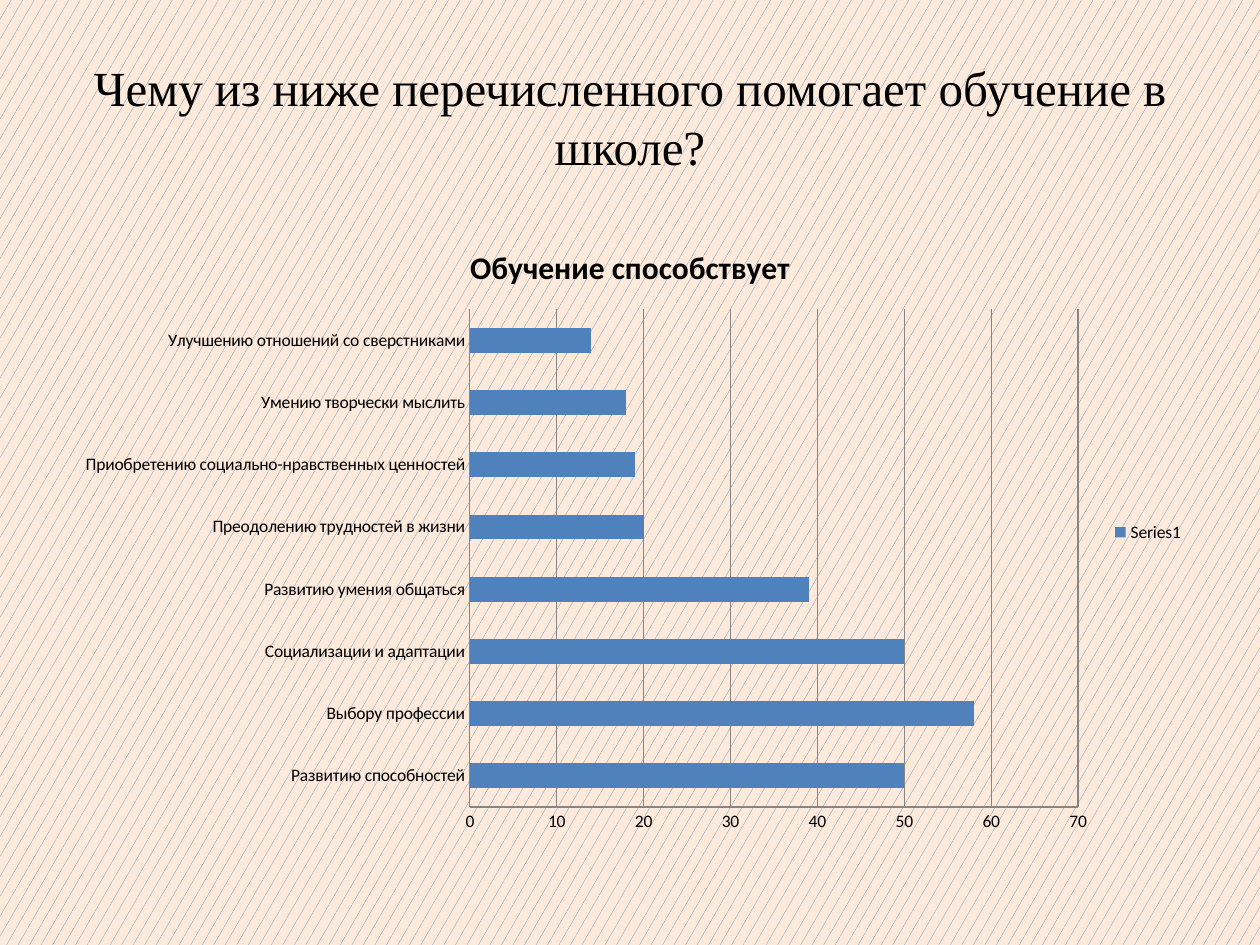
from pptx import Presentation
from pptx.chart.data import CategoryChartData
from pptx.dml.color import RGBColor
from pptx.enum.chart import (XL_AXIS_CROSSES, XL_CHART_TYPE, XL_LEGEND_POSITION,
                             XL_TICK_LABEL_POSITION, XL_TICK_MARK)
from pptx.enum.dml import MSO_PATTERN
from pptx.enum.text import MSO_ANCHOR, PP_ALIGN
from pptx.util import Inches, Pt

BAR, RIGHT = XL_CHART_TYPE.BAR_CLUSTERED, XL_LEGEND_POSITION.RIGHT
NO_TICK, NEXT_TO = XL_TICK_MARK.NONE, XL_TICK_LABEL_POSITION.NEXT_TO_AXIS
AT_ZERO, CONFETTI = XL_AXIS_CROSSES.AUTOMATIC, MSO_PATTERN.SMALL_CONFETTI
CENTER, MIDDLE = PP_ALIGN.CENTER, MSO_ANCHOR.MIDDLE

ANSWERS = {
    "Развитию способностей": 50,
    "Выбору профессии": 58,
    "Социализации и адаптации": 50,
    "Развитию умения общаться": 39,
    "Преодолению трудностей в жизни": 20,
    "Приобретению социально-нравственных ценностей": 19,
    "Умению творчески мыслить": 18,
    "Улучшению отношений со сверстниками": 14,
}


def rgb(value):
    """Turn a hex string into a colour."""
    return RGBColor.from_string(value)


def style_font(font, size, name="Calibri", color="000000", bold=False):
    """Format a font."""
    font.size, font.name, font.bold = Pt(size), name, bold
    font.color.rgb = rgb(color)


def write(tf, text, **fmt):
    """Put one centred, formatted paragraph in a text frame."""
    p = tf.paragraphs[0]
    p.alignment = CENTER
    r = p.add_run()
    r.text = text
    style_font(r.font, **fmt)


class Deck:
    """Hold the style and the current slide."""

    accent, paper, grid = "4F81BD", "FDEADA", "868686"

    def __init__(self, width, height):
        """Start a presentation of the given size in inches."""
        self.prs = Presentation()
        self.prs.slide_width, self.prs.slide_height = Inches(width), Inches(height)

    def box(self, x, y, w, h):
        """Turn shares of the slide into lengths."""
        width, height = self.prs.slide_width, self.prs.slide_height
        return int(x * width), int(y * height), int(w * width), int(h * height)

    def slide(self):
        """Add a title-only slide with a patterned background."""
        self.s = self.prs.slides.add_slide(self.prs.slide_layouts[5])
        fill = self.s.background.fill
        fill.patterned()
        fill.pattern = CONFETTI
        fill.fore_color.rgb, fill.back_color.rgb = rgb(self.accent), rgb(self.paper)

    def title(self, text, *shares):
        """Place and fill the title placeholder."""
        sp = self.s.shapes.title
        sp.left, sp.top, sp.width, sp.height = self.box(*shares)
        tf = sp.text_frame
        tf.word_wrap, tf.vertical_anchor = True, MIDDLE
        write(tf, text, size=28, name="Times New Roman")

    def bars(self, heading, name, values, *shares):
        """Add a bar chart with a heading and a legend."""
        data = CategoryChartData()
        data.categories = list(values)
        data.add_series(name, list(values.values()))
        chart = self.s.shapes.add_chart(BAR, *self.box(*shares), data).chart
        style_font(chart.font, 10)
        write(chart.chart_title.text_frame, heading, size=18, bold=True)
        chart.has_legend = True
        chart.legend.position, chart.legend.include_in_layout = RIGHT, False
        plot = chart.plots[0]
        plot.gap_width, plot.vary_by_categories = 150, False
        fill = plot.series[0].format.fill
        fill.solid()
        fill.fore_color.rgb = rgb(self.accent)
        cat, val = chart.category_axis, chart.value_axis
        val.crosses, val.has_major_gridlines = AT_ZERO, True
        for axis in (cat, val):
            axis.tick_label_position = NEXT_TO
            axis.major_tick_mark = axis.minor_tick_mark = NO_TICK
        for line in (cat.format.line, val.format.line, val.major_gridlines.format.line):
            line.color.rgb, line.width = rgb(self.grid), Pt(0.75)


def main():
    """Build and save the slide."""
    deck = Deck(10, 7.5)
    deck.slide()
    deck.title("Чему из ниже перечисленного помогает обучение в школе?",
               0.05, 0.04, 0.9, 1 / 6)
    deck.bars("Обучение способствует", "Series1", ANSWERS, 0.05, 7 / 30, 0.9, 0.66)
    deck.prs.save("out.pptx")


if __name__ == "__main__":
    main()
